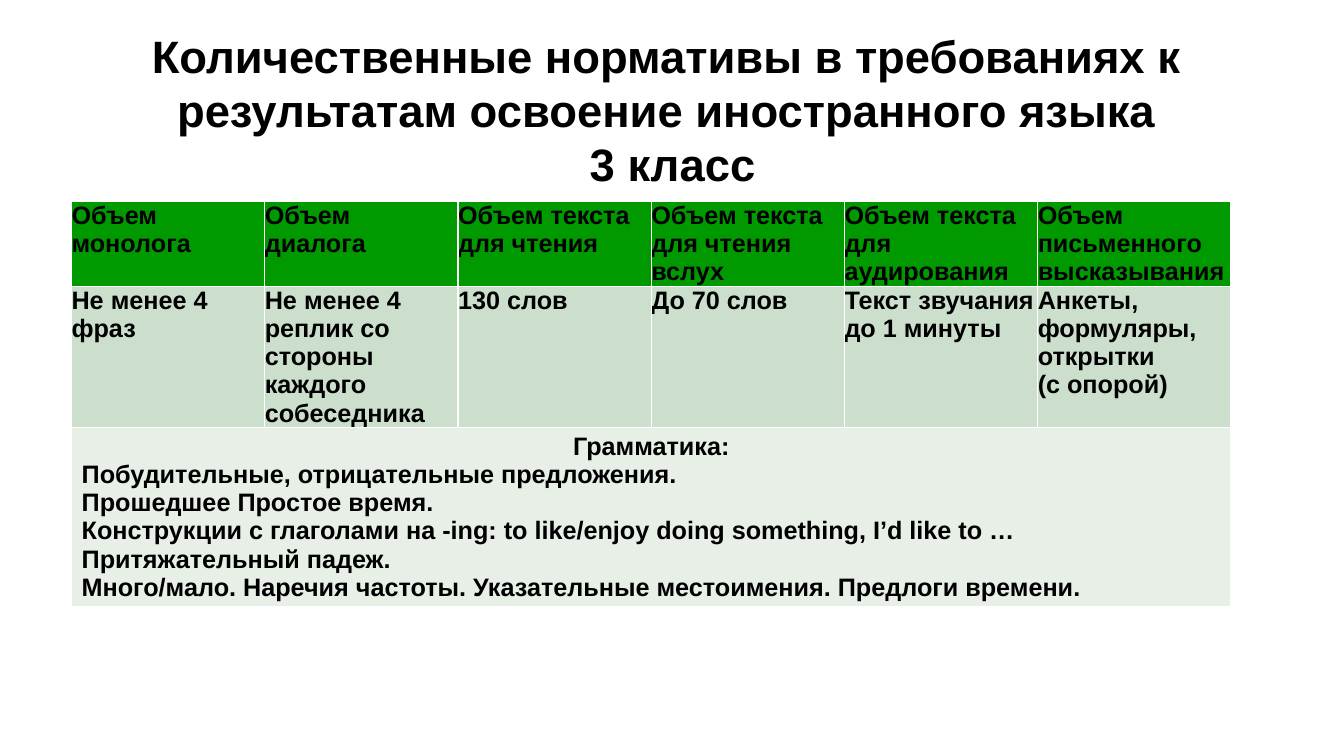
from pptx import Presentation
from pptx.dml.color import RGBColor
from pptx.enum.text import MSO_ANCHOR, MSO_AUTO_SIZE, PP_ALIGN
from pptx.util import Inches, Pt

TITLE = ("Количественные нормативы в требованиях к \v"
         "результатам освоение иностранного языка \v3 класс")
NORMS = [
    ("Объем монолога", "Не менее 4 фраз"),
    ("Объем диалога", "Не менее 4 реплик со стороны каждого собеседника"),
    ("Объем текста для чтения", "130 слов"),
    ("Объем текста для чтения вслух", "До 70 слов"),
    ("Объем текста для аудирования", "Текст звучания до 1 минуты"),
    ("Объем письменного высказывания", "Анкеты, формуляры, открытки\n(с опорой)"),
]
GRAMMAR = [
    "Грамматика:",
    "Побудительные, отрицательные предложения.",
    "Прошедшее Простое время.",
    "Конструкции с глаголами на -ing: to like/enjoy doing something, I’d like to …",
    "Притяжательный падеж.",
    "Много/мало. Наречия частоты. Указательные местоимения. Предлоги времени.",
]
COLORS = {"text": "000000", "header": "009900", "norm": "CCDECC", "grammar": "E7EFE7"}
ROW_HEIGHTS = (0.83, 1.4, 1.78)
TABLE_WIDTH = 11.5


def style_text(frame, size):
    for paragraph in frame.paragraphs:
        for run in paragraph.runs:
            run.font.name = "Arial"
            run.font.size = Pt(size)
            run.font.bold = True
            run.font.color.rgb = RGBColor.from_string(COLORS["text"])


def fill_cell(cell, text, color):
    cell.text_frame.text = text
    style_text(cell.text_frame, 18)
    cell.fill.solid()
    cell.fill.fore_color.rgb = RGBColor.from_string(COLORS[color])


def main():
    prs = Presentation()
    prs.slide_width, prs.slide_height = Inches(13.33), Inches(7.5)
    slide = prs.slides.add_slide(prs.slide_layouts[5])

    title = slide.shapes.title
    title.left, title.top = Inches(0.67), Inches(0.21)
    title.width, title.height = Inches(12), Inches(1.75)
    frame = title.text_frame
    frame.text = TITLE
    frame.word_wrap = True
    frame.auto_size = MSO_AUTO_SIZE.NONE
    frame.vertical_anchor = MSO_ANCHOR.MIDDLE
    frame.paragraphs[0].alignment = PP_ALIGN.CENTER
    style_text(frame, 32.4)

    table = slide.shapes.add_table(
        len(ROW_HEIGHTS), len(NORMS), Inches(0.71), Inches(2),
        Inches(TABLE_WIDTH), Inches(sum(ROW_HEIGHTS))).table
    for row, height in zip(table.rows, ROW_HEIGHTS):
        row.height = Inches(height)

    for col, norm in enumerate(NORMS):
        for row, (text, color) in enumerate(zip(norm, ("header", "norm"))):
            cell = table.cell(row, col)
            cell.margin_left = cell.margin_right = 0
            cell.margin_top = cell.margin_bottom = 0
            fill_cell(cell, text, color)

    grammar = table.cell(2, 0)
    grammar.merge(table.cell(2, len(NORMS) - 1))
    fill_cell(grammar, "\n".join(GRAMMAR), "grammar")
    grammar.text_frame.paragraphs[0].alignment = PP_ALIGN.CENTER

    prs.save("out.pptx")


if __name__ == "__main__":
    main()
